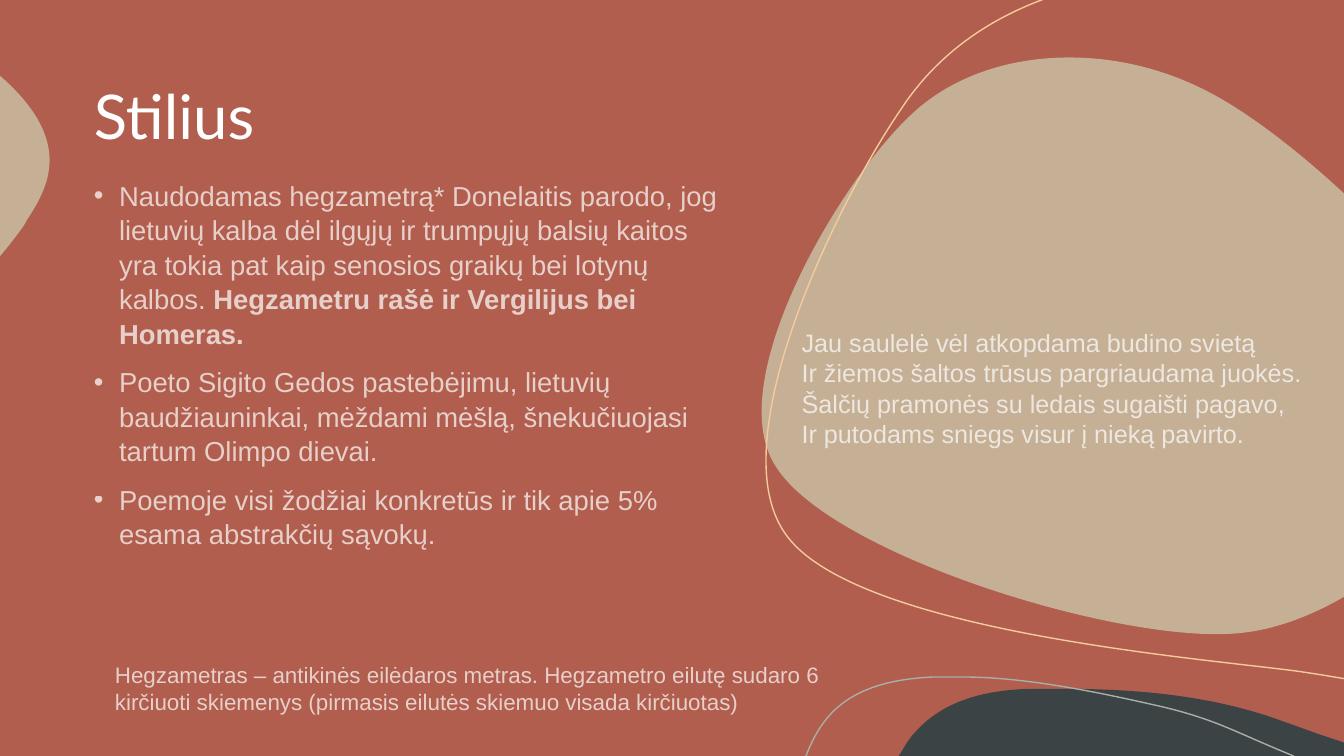
from math import cos, radians, sin

from pptx import Presentation
from pptx.dml.color import RGBColor
from pptx.enum.text import MSO_ANCHOR, MSO_AUTO_SIZE
from pptx.oxml.ns import qn
from pptx.util import Emu, Inches, Pt
from lxml.etree import SubElement

COLUMNS, ROWS = 160, 90
WIDTH, HEIGHT = Inches(13.33), Inches(7.5)
COLORS = {
    "background": "B15E4E", "sand": "C5B096", "slate": "3B4345",
    "gray": "A9AEA7", "gold": "F4CB99", "text": "FFFFFF",
}

# Each outline is a start point, then line ends (x, y)
# or cubic curves (control 1, control 2, end), in grid columns and rows.
SLATE_HILL = [
    (126.5, 82), (135.4, 82, 144.5, 82.8, 152.8, 85.9),
    (154.3, 86.4, 155.8, 87, 157.3, 87.5),
    (160, 88.4), (160, 90), (107, 90), (107.8, 88.7),
    (108.2, 88, 108.7, 87.4, 109.3, 86.8),
    (112.7, 83.2, 117.8, 82.1, 122.8, 82), (124, 82, 125.2, 82, 126.5, 82),
]
SAND_EDGE = [
    (0, 9), (0.1, 9.1), (3.6, 12.2, 6.5, 16, 5.8, 20.4),
    (5.5, 22.4, 4.4, 24.4, 3.2, 26.2), (2.9, 26.9, 2, 28, 1, 29.3), (0, 30.5),
]
GRAY_ARC = [
    (95.9, 90), (96, 89.9), (96.7, 88, 97.7, 86.3, 98.9, 85),
    (102, 81.7, 106.7, 80.8, 111.1, 80.6), (114.6, 80.6),
    (122.6, 80.6, 132, 82.7, 138.6, 84.2), (145.1, 85.8, 147.1, 87.2, 154, 90),
]
SAND_BLOB = [
    (109.1, 13.1), (100.6, 20.5, 85.8, 45.1, 92.3, 55.4),
    (98.6, 65.9, 133.2, 76.7, 147.4, 75.4), (161.5, 74.2, 178, 58.6, 177.2, 47.8),
    (176.6, 37, 154.8, 16.3, 143.4, 10.7), (132, 4.9, 117.6, 5.6, 109.1, 13.1),
]
BLOB_CENTER, BLOB_TURN = (135.9, 42.5), 21.2
GOLD_RING = [
    (137.5, -3.1), (126.7, -1.9, 114.5, 1.9, 107.2, 13.1),
    (99.7, 24.1, 85.8, 52.3, 93.4, 63.4), (100.8, 74.5, 138.7, 78, 152, 79.6),
    (165.5, 81.1, 170.4, 85, 173.6, 72.7), (176.9, 60.5, 177.5, 18.6, 171.5, 6),
    (165.5, -6.7, 148.2, -4.3, 137.5, -3.1),
]

STYLE_POINTS = [
    [("Naudodamas hegzametrą* Donelaitis parodo, jog lietuvių kalba dėl ilgųjų ir "
      "trumpųjų balsių kaitos yra tokia pat kaip senosios graikų bei lotynų kalbos. ", False),
     ("Hegzametru rašė ir Vergilijus bei Homeras.", True)],
    [("Poeto Sigito Gedos pastebėjimu, lietuvių baudžiauninkai, mėždami mėšlą, "
      "šnekučiuojasi tartum Olimpo dievai.", False)],
    [("Poemoje visi žodžiai konkretūs ir tik apie 5% esama abstrakčių sąvokų.", False)],
]
FOOTNOTE = ("Hegzametras – antikinės eilėdaros metras. Hegzametro eilutę sudaro 6 "
            "kirčiuoti skiemenys (pirmasis eilutės skiemuo visada kirčiuotas)")
VERSE = [
    "Jau saulelė vėl atkopdama budino svietą",
    "Ir žiemos šaltos trūsus pargriaudama juokės.",
    "Šalčių pramonės su ledais sugaišti pagavo,",
    "Ir putodams sniegs visur į nieką pavirto.",
]


def color(name):
    return RGBColor.from_string(COLORS[name])


def across(columns):
    return Emu(round(WIDTH * columns / COLUMNS))


def down(rows):
    return Emu(round(HEIGHT * rows / ROWS))


def pairs(segment):
    return list(zip(segment[::2], segment[1::2]))


def turn(outline, center, degrees):
    """Rotate an outline clockwise about a center."""
    c, s = cos(radians(degrees)), sin(radians(degrees))
    cx, cy = center
    return [tuple(value for x, y in pairs(segment)
                  for value in (cx + (x - cx) * c - (y - cy) * s,
                                cy + (x - cx) * s + (y - cy) * c))
            for segment in outline]


def bounds(segments, steps=40):
    """Return left, top, right and bottom of the lines and curves."""
    reached = [segments[0][0]]
    for before, segment in zip(segments, segments[1:]):
        if len(segment) == 3:
            p0, (p1, p2, p3) = before[-1], segment
            for t in (step / steps for step in range(1, steps)):
                reached.append(tuple(
                    (1 - t) ** 3 * a + 3 * t * (1 - t) ** 2 * b + 3 * t * t * (1 - t) * c + t ** 3 * d
                    for a, b, c, d in zip(p0, p1, p2, p3)))
        reached.append(segment[-1])
    xs, ys = zip(*reached)
    return [round(edge) for edge in (min(xs), min(ys), max(xs), max(ys))]


def add_outline(page, outline, fill=None, line=None, close=True, rotation=0):
    segments = [[(across(x), down(y)) for x, y in pairs(segment)] for segment in outline]
    builder = page.shapes.build_freeform(*segments[0][0], scale=1.0)
    builder.add_line_segments([segment[-1] for segment in segments[1:]], close=close)
    shape = builder.convert_to_shape()
    bend(shape, segments)
    shape.rotation = rotation
    shape.shadow.inherit = False
    if fill:
        shape.fill.solid()
        shape.fill.fore_color.rgb = color(fill)
    else:
        shape.fill.background()
    if line:
        shape.line.color.rgb = color(line)
        shape.line.width = Pt(1)
    else:
        shape.line.fill.background()


def bend(shape, segments):
    """Turn the freeform's straight pieces into the given lines and curves."""
    left, top, right, bottom = bounds(segments)
    shape.left, shape.top = Emu(left), Emu(top)
    shape.width, shape.height = Emu(right - left), Emu(bottom - top)
    geometry = next(shape.element.iter(qn("a:path")))
    geometry.set("w", str(right - left))
    geometry.set("h", str(bottom - top))
    pieces = [piece for piece in geometry if piece.tag != qn("a:close")]
    for piece, segment in zip(pieces, segments):
        for point in list(piece):
            piece.remove(point)
        if len(segment) == 3:
            curve = SubElement(geometry, qn("a:cubicBezTo"))
            geometry.replace(piece, curve)
            piece = curve
        for x, y in segment:
            SubElement(piece, qn("a:pt"), x=str(x - left), y=str(y - top))


def add_bullet(para):
    properties = para._p.get_or_add_pPr()
    properties.set("marL", str(Inches(0.25)))
    properties.set("indent", str(-Inches(0.25)))
    SubElement(properties, qn("a:buFont"), typeface="Arial")
    SubElement(properties, qn("a:buChar"), char="•")


def add_text(page, paragraphs, left, top, width, height, size, font="Arial", opacity=70,
             bullets=False, spacing=None, gap=0, anchor=MSO_ANCHOR.TOP, grow=False):
    """Add a text box; each paragraph is a string or a list of (text, bold) spans."""
    box = page.shapes.add_textbox(across(left), down(top), across(width), down(height))
    frame = box.text_frame
    frame.word_wrap = True
    frame.vertical_anchor = anchor
    frame.auto_size = MSO_AUTO_SIZE.SHAPE_TO_FIT_TEXT if grow else MSO_AUTO_SIZE.NONE
    for index, content in enumerate(paragraphs):
        para = frame.add_paragraph() if index else frame.paragraphs[0]
        if bullets:
            add_bullet(para)
        if spacing:
            para.line_spacing = spacing
        if index and gap:
            para.space_before = Pt(gap)
        for text, bold in [(content, False)] if isinstance(content, str) else content:
            span = para.add_run()
            span.text = text
            span.font.name, span.font.size, span.font.bold = font, Pt(size), bold
            span.font.color.rgb = color("text")
    if opacity < 100:
        for tint in box.element.iter(qn("a:srgbClr")):
            SubElement(tint, qn("a:alpha"), val=str(opacity * 1000))


def main():
    deck = Presentation()
    deck.slide_width, deck.slide_height = WIDTH, HEIGHT
    page = deck.slides.add_slide(deck.slide_layouts[6])
    page.background.fill.solid()
    page.background.fill.fore_color.rgb = color("background")
    add_outline(page, SLATE_HILL, fill="slate")
    add_outline(page, SAND_EDGE, fill="sand")
    add_outline(page, GRAY_ARC, line="gray", close=False)
    add_text(page, ["Stilius"], 10, 4.2, 140, 20, size=44, font="Lato", opacity=100,
             spacing=0.9, anchor=MSO_ANCHOR.MIDDLE)
    add_text(page, STYLE_POINTS, 10, 20.5, 76.8, 53.8, size=19.6, bullets=True,
             spacing=1.05, gap=10)
    add_text(page, [FOOTNOTE], 12.5, 78.1, 95, 7.7, size=16, grow=True)
    add_outline(page, turn(SAND_BLOB, BLOB_CENTER, -BLOB_TURN), fill="sand", rotation=BLOB_TURN)
    add_text(page, VERSE, 94.25, 38.4, 65.75, 15.7, size=18, grow=True)
    add_outline(page, GOLD_RING, line="gold")
    deck.save("out.pptx")


if __name__ == "__main__":
    main()
